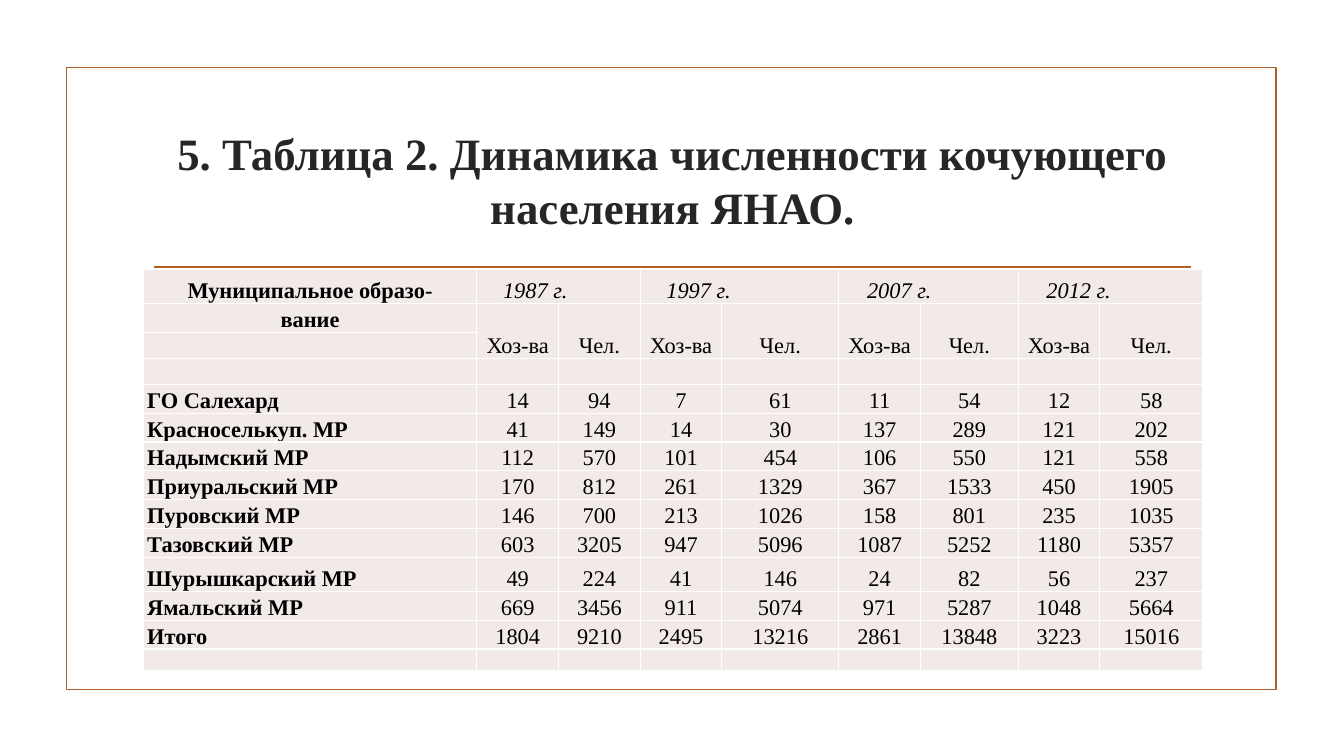
from lxml import etree
from pptx import Presentation
from pptx.dml.color import RGBColor
from pptx.enum.shapes import MSO_CONNECTOR, MSO_SHAPE
from pptx.enum.text import MSO_ANCHOR, PP_ALIGN
from pptx.oxml.ns import qn
from pptx.util import Inches, Pt

LEFT, CENTER = PP_ALIGN.LEFT, PP_ALIGN.CENTER
MIDDLE, BOTTOM = MSO_ANCHOR.MIDDLE, MSO_ANCHOR.BOTTOM
RECTANGLE, STRAIGHT = MSO_SHAPE.RECTANGLE, MSO_CONNECTOR.STRAIGHT
COLORS = {"accent": "B15E28", "title": "262626", "text": "000000",
          "cell": "F2EAE8", "border": "FFFFFF"}
FONT = "Times New Roman"
LEFT_EDGE, CONTENT_WIDTH = 1.42, 10.5


def write(frame, text, size=16, color="text", bold=False, italic=False,
          align=CENTER, indent=0, spacing=1.07):
    paragraph = frame.paragraphs[0]
    paragraph.alignment = align
    paragraph.line_spacing = spacing
    if indent:
        paragraph._p.get_or_add_pPr().set("marL", str(Inches(indent)))
    run = paragraph.add_run()
    run.text = text
    run.font.name = FONT
    run.font.size = Pt(size)
    run.font.bold = bold
    run.font.italic = italic
    run.font.color.rgb = RGBColor.from_string(COLORS[color])


def style_cell(cell):
    cell.margin_left = cell.margin_right = cell.margin_top = cell.margin_bottom = 0
    cell.vertical_anchor = BOTTOM
    properties = cell._tc.get_or_add_tcPr()
    for side in ("a:lnL", "a:lnR", "a:lnT", "a:lnB"):
        line = etree.SubElement(properties, qn(side), w=str(Pt(1)))
        fill = etree.SubElement(line, qn("a:solidFill"))
        etree.SubElement(fill, qn("a:srgbClr"), val=COLORS["border"])
    cell.fill.solid()
    cell.fill.fore_color.rgb = RGBColor.from_string(COLORS["cell"])


presentation = Presentation()
presentation.slide_width, presentation.slide_height = Inches(13.33), Inches(7.5)
slide = presentation.slides.add_slide(presentation.slide_layouts[6])

# Frame and rule under the title
border = slide.shapes.add_shape(RECTANGLE, Inches(0.66), Inches(0.67), Inches(12), Inches(6.17))
border.shadow.inherit = False
border.fill.background()
rule = slide.shapes.add_connector(STRAIGHT, Inches(1.53), Inches(2.65), Inches(11.81), Inches(2.65))
etree.SubElement(rule._element.spPr, qn("a:effectLst"))
for shape in (border, rule):
    shape.line.color.rgb = RGBColor.from_string(COLORS["accent"])
    shape.line.width = Pt(1.25)

# Title
title = slide.shapes.add_textbox(Inches(LEFT_EDGE), Inches(1.07), Inches(CONTENT_WIDTH), Inches(1.43))
title.text_frame.word_wrap = True
title.text_frame.vertical_anchor = MIDDLE
write(title.text_frame, "5. Таблица 2. Динамика численности кочующего населения ЯНАО.",
      size=32, color="title", bold=True, spacing=1.0)

# Table data
years = [("1987 г.", 0.26), ("1997 г.", 0.26), ("2007 г.", 0.28), ("2012 г.", 0.28)]
districts = [
    ("ГО Салехард", 14, 94, 7, 61, 11, 54, 12, 58),
    ("Красноселькуп. МР", 41, 149, 14, 30, 137, 289, 121, 202),
    ("Надымский МР", 112, 570, 101, 454, 106, 550, 121, 558),
    ("Приуральский МР", 170, 812, 261, 1329, 367, 1533, 450, 1905),
    ("Пуровский МР", 146, 700, 213, 1026, 158, 801, 235, 1035),
    ("Тазовский МР", 603, 3205, 947, 5096, 1087, 5252, 1180, 5357),
    ("Шурышкарский МР", 49, 224, 41, 146, 24, 82, 56, 237),
    ("Ямальский МР", 669, 3456, 911, 5074, 971, 5287, 1048, 5664),
    ("Итого", 1804, 9210, 2495, 13216, 2861, 13848, 3223, 15016),
]
column_widths = [3.31, 0.81, 0.81, 0.81, 1.16, 0.81, 0.97, 0.81, 1.02]
row_heights = [0.34] + [0.26] * 9 + [0.34] + [0.26] * 2 + [0.21]
FIRST_DATA_ROW = 4

# Table grid
table = slide.shapes.add_table(
    len(row_heights), len(column_widths), Inches(LEFT_EDGE), Inches(2.67),
    Inches(CONTENT_WIDTH), Inches(sum(row_heights))).table
table.first_row = table.horz_banding = False
for column, width in zip(table.columns, column_widths):
    column.width = Inches(width)
for row, height in zip(table.rows, row_heights):
    row.height = Inches(height)
for cell in table.iter_cells():
    style_cell(cell)

# Header rows
write(table.cell(0, 0).text_frame, "Муниципальное образо-", bold=True)
write(table.cell(1, 0).text_frame, "вание", bold=True)
for index, (year, indent) in enumerate(years):
    first = 1 + 2 * index
    table.cell(0, first).merge(table.cell(0, first + 1))
    write(table.cell(0, first).text_frame, year, italic=True, align=LEFT, indent=indent)
    for column, label in enumerate(("Хоз-ва", "Чел."), first):
        table.cell(1, column).merge(table.cell(2, column))
        write(table.cell(1, column).text_frame, label)

# District rows
for row, (name, *values) in enumerate(districts, FIRST_DATA_ROW):
    write(table.cell(row, 0).text_frame, name, bold=True, align=LEFT, indent=0.04)
    for column, value in enumerate(values, 1):
        write(table.cell(row, column).text_frame, str(value))

# Small type in empty cells keeps their rows low
for cell in table.iter_cells():
    if not cell.text_frame.text:
        etree.SubElement(cell.text_frame.paragraphs[0]._p, qn("a:endParaRPr"), sz="1000")

presentation.save("out.pptx")
